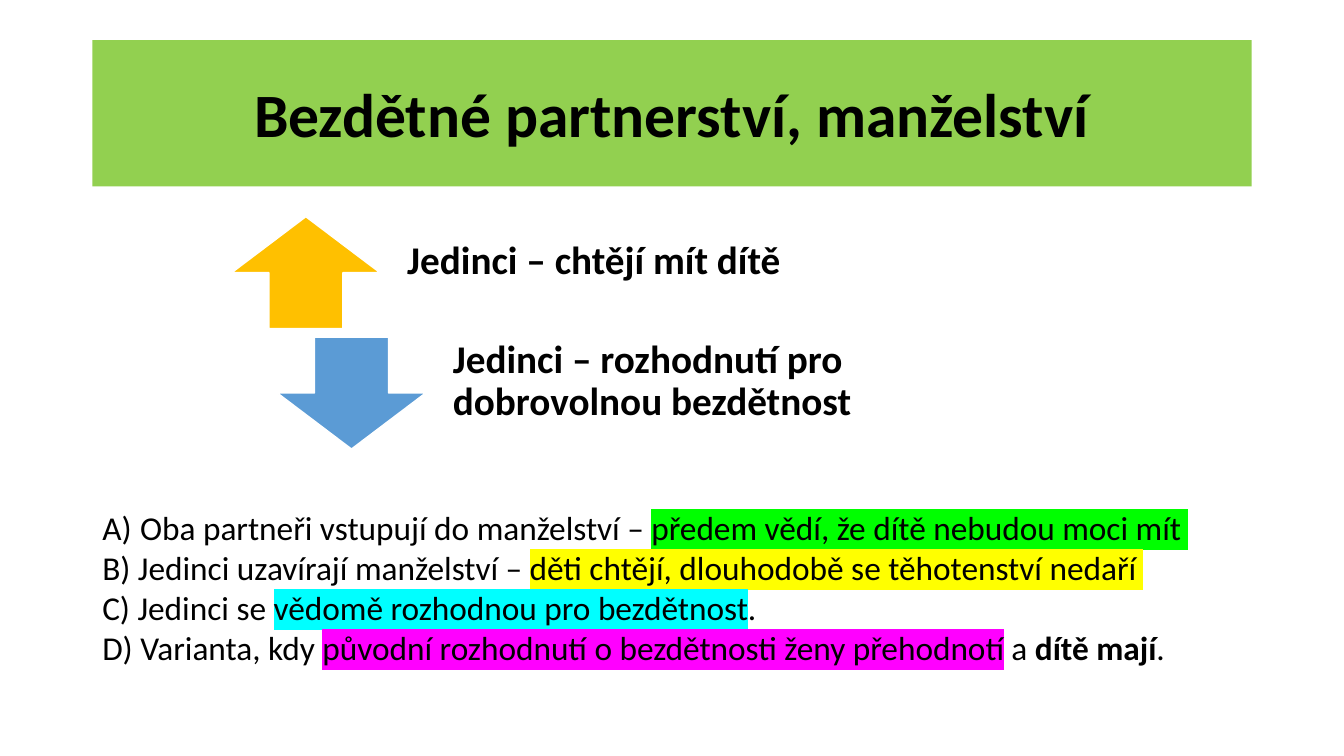
from lxml import etree
from pptx import Presentation
from pptx.dml.color import RGBColor
from pptx.enum import shapes, text
from pptx.oxml import ns
from pptx.util import Pt

# Content
TITLE = "Bezdětné partnerství, manželství"
CHOICES = [
    (shapes.MSO_SHAPE.UP_ARROW, "FFC000", "Jedinci – chtějí mít dítě"),
    (shapes.MSO_SHAPE.DOWN_ARROW, "5B9BD5",
     "Jedinci – rozhodnutí pro dobrovolnou bezdětnost"),
]
# Each variant is a list of (words, highlight, bold)
VARIANTS = [
    [("Oba partneři vstupují do manželství – ", None, False),
     ("předem vědí, že dítě nebudou moci mít ", "00FF00", False)],
    [("B) Jedinci uzavírají manželství – ", None, False),
     ("děti chtějí, dlouhodobě se těhotenství nedaří ", "FFFF00", False)],
    [("C) Jedinci se ", None, False),
     ("vědomě rozhodnou pro bezdětnost", "00FFFF", False),
     (".", None, False)],
    [("D) Varianta, kdy ", None, False),
     ("původní rozhodnutí o bezdětnosti ženy přehodnotí", "FF00FF", False),
     (" a ", None, False), ("dítě mají", None, True), (".", None, False)],
]

# Layout in points
LEFT, WIDTH = 66, 828
ARROW_LEFT, ARROW_TOP, ARROW_W, ARROW_H = 165.6, 154.8, 105.8, 79.9
STEP_X, STEP_Y = 32.6, 86
LABEL_OFFSET, LABEL_W, LABEL_PAD = 109.4, 366.5, 15.9
VARIANTS_TOP, VARIANTS_H = 362.5, 124
NUMBER_INDENT = 27


def rgb(value):
    return RGBColor.from_string(value)


def add_run(paragraph, words, size, bold, highlight=None):
    run = paragraph.add_run()
    run.text = words
    run.font.size, run.font.bold = Pt(size), bold
    run.font.color.rgb = rgb("000000")
    if highlight:
        mark = etree.SubElement(run.font._element, ns.qn("a:highlight"))
        etree.SubElement(mark, ns.qn("a:srgbClr"), val=highlight)
    run.font.name = "Calibri"


def set_margins(frame, left, top, right, bottom):
    frame.margin_left, frame.margin_top = Pt(left), Pt(top)
    frame.margin_right, frame.margin_bottom = Pt(right), Pt(bottom)


prs = Presentation()
prs.slide_width, prs.slide_height = Pt(960), Pt(540)
slide = prs.slides.add_slide(prs.slide_layouts[5])

# Title band
title = slide.shapes.title
title.left, title.top, title.width, title.height = Pt(LEFT), Pt(28.75), Pt(WIDTH), Pt(104.4)
title.fill.solid()
title.fill.fore_color.rgb = rgb("92D050")
title.text_frame.vertical_anchor = text.MSO_ANCHOR.MIDDLE
heading = title.text_frame.paragraphs[0]
heading.alignment = text.PP_ALIGN.CENTER
add_run(heading, TITLE, 44, True)

# Lettered variants
variants = slide.shapes.add_textbox(
    Pt(LEFT), Pt(VARIANTS_TOP), Pt(WIDTH), Pt(VARIANTS_H)).text_frame
variants.word_wrap = True
set_margins(variants, 7.2, 0, 7.2, 0)
for i, parts in enumerate(VARIANTS):
    variant = variants.add_paragraph() if i else variants.paragraphs[0]
    variant.alignment = text.PP_ALIGN.JUSTIFY
    for words, highlight, bold in parts:
        add_run(variant, words, 23.8, bold, highlight)

# Automatic letter on the first variant
numbering = variants.paragraphs[0]._p.get_or_add_pPr()
numbering.set("marL", str(Pt(NUMBER_INDENT)))
numbering.set("indent", str(-Pt(NUMBER_INDENT)))
etree.SubElement(numbering, ns.qn("a:buFont"), typeface="+mj-lt")
etree.SubElement(numbering, ns.qn("a:buAutoNum"), type="alphaUcParenR")

# Opposing arrows with their labels
for i, (kind, colour, words) in enumerate(CHOICES):
    x, y = ARROW_LEFT + i * STEP_X, ARROW_TOP + i * STEP_Y
    arrow = slide.shapes.add_shape(kind, Pt(x), Pt(y), Pt(ARROW_W), Pt(ARROW_H))
    arrow.shadow.inherit = False
    arrow.fill.solid()
    arrow.fill.fore_color.rgb = rgb(colour)
    arrow.line.color.rgb = rgb("FFFFFF")
    arrow.line.width = Pt(1)

    label = slide.shapes.add_textbox(
        Pt(x + LABEL_OFFSET), Pt(y), Pt(LABEL_W), Pt(ARROW_H)).text_frame
    label.word_wrap = True
    label.vertical_anchor = text.MSO_ANCHOR.MIDDLE
    set_margins(label, LABEL_PAD, 0, LABEL_PAD, LABEL_PAD)
    label.paragraphs[0].line_spacing = 0.9
    add_run(label.paragraphs[0], words, 28, True)

prs.save("out.pptx")
